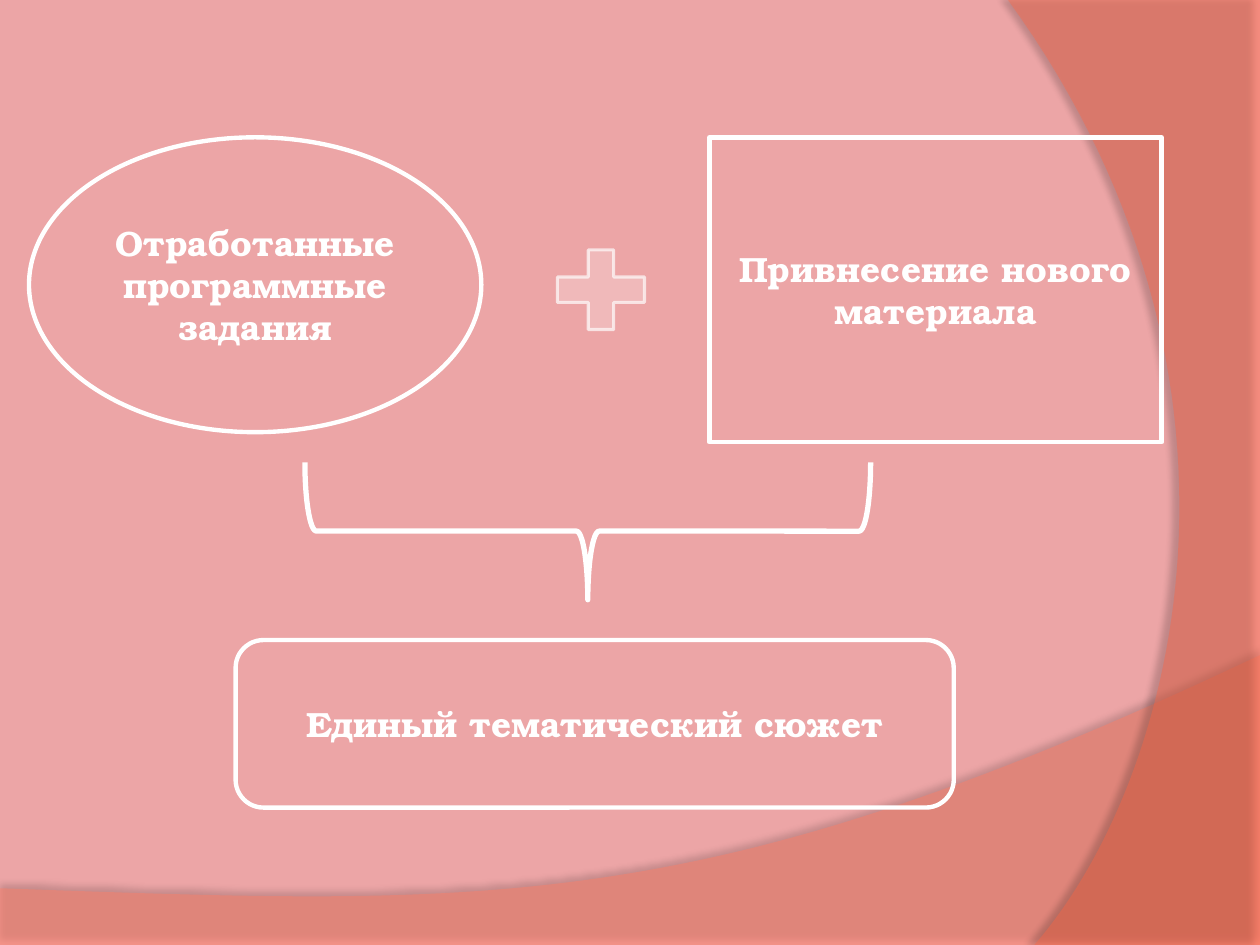
from lxml.etree import SubElement
from pptx import Presentation
from pptx.dml.color import RGBColor
from pptx.enum.shapes import MSO_SHAPE
from pptx.enum.text import MSO_ANCHOR, PP_ALIGN
from pptx.oxml.ns import qn
from pptx.util import Inches, Pt

WIDTH, HEIGHT = 10, 7.5
FONT = "TeX Gyre Bonum"
COLORS = {
    "background": "ECA5A6",
    "bottom wave": "FF7E66",
    "right wave": "FF6542",
    "white": "FFFFFF",
    "shadow": "000000",
}

# Content: shape kind, left, top, width, height, inset, lines of text
TOP_ROW, BOX_WIDTH = 1.09, 3.59
IDEAS = [
    (MSO_SHAPE.OVAL, 0.23, TOP_ROW, BOX_WIDTH, 2.34, 0.1,
     ["Отработанные программные задания"]),
    (MSO_SHAPE.RECTANGLE, 5.63, TOP_ROW, BOX_WIDTH, 2.42, 0.05,
     ["Привнесение нового", "материала"]),
    (MSO_SHAPE.ROUNDED_RECTANGLE, 1.87, 5.08, 5.7, 1.33, 0.1,
     ["Единый тематический сюжет"]),
]

# Waves: color, opacity, straight corners, curve (four control points),
# shadow (opacity, blur, distance, direction)
WAVES = [
    ("bottom wave", 45, [(0, HEIGHT), (WIDTH, HEIGHT)],
     [(WIDTH, 5.2), (5.59, 7.29), (3.91, 7.19), (0, 7.05)], (35, 4, 3.5, 270)),
    ("right wave", 40, [(WIDTH, 0), (WIDTH, HEIGHT)],
     [(8.21, HEIGHT), (9.35, 6.19), (10.18, 3), (8, 0)], (45, 4, 4, 180)),
]


def color(name):
    return RGBColor.from_string(COLORS[name])


def set_opacity(fill_element, percent):
    SubElement(fill_element.find(".//" + qn("a:srgbClr")), qn("a:alpha"),
               val=str(percent * 1000))


def curve_points(controls, steps=60):
    a, b, c, d = controls
    for step in range(steps + 1):
        t = step / steps
        weights = ((1 - t) ** 3, 3 * t * (1 - t) ** 2, 3 * t * t * (1 - t), t ** 3)
        yield tuple(sum(w * p[axis] for w, p in zip(weights, (a, b, c, d)))
                    for axis in (0, 1))


def add_wave(shapes, name, opacity, corners, controls, shadow):
    points = [(Inches(x), Inches(y)) for x, y in [*corners, *curve_points(controls)]]
    builder = shapes.build_freeform(*points[0], scale=1.0)
    builder.add_line_segments(points[1:], close=True)
    wave = builder.convert_to_shape()
    wave.fill.solid()
    wave.fill.fore_color.rgb = color(name)
    set_opacity(wave.element.spPr.find(qn("a:solidFill")), opacity)
    wave.line.fill.background()
    wave.shadow.inherit = False
    shadow_opacity, blur, distance, direction = shadow
    outer = SubElement(wave.element.spPr.find(qn("a:effectLst")), qn("a:outerShdw"),
                       blurRad=str(Pt(blur)), dist=str(Pt(distance)),
                       dir=str(direction * 60000), algn="ctr", rotWithShape="0")
    tint = SubElement(outer, qn("a:srgbClr"), val=COLORS["shadow"])
    SubElement(tint, qn("a:alpha"), val=str(shadow_opacity * 1000))


def add_outline(shapes, kind, left, top, width, height, weight=2.5):
    shape = shapes.add_shape(kind, *map(Inches, (left, top, width, height)))
    shape.shadow.inherit = False
    shape.fill.background()
    shape.line.color.rgb = color("white")
    shape.line.width = Pt(weight)
    return shape


def add_idea(shapes, kind, left, top, width, height, inset, lines):
    frame = add_outline(shapes, kind, left, top, width, height).text_frame
    frame.word_wrap = True
    frame.vertical_anchor = MSO_ANCHOR.MIDDLE
    frame.margin_left = frame.margin_right = Inches(inset)
    frame.margin_top = frame.margin_bottom = Inches(0.05)
    para = frame.paragraphs[0]
    para.alignment = PP_ALIGN.CENTER
    for number, line in enumerate(lines):
        if number:
            para.add_line_break()
        span = para.add_run()
        span.text = line
        span.font.name = FONT
        span.font.size = Pt(20)
        span.font.bold = True
        span.font.color.rgb = color("white")


def main():
    deck = Presentation()
    deck.slide_width, deck.slide_height = Inches(WIDTH), Inches(HEIGHT)
    page = deck.slides.add_slide(deck.slide_layouts[6])
    page.background.fill.solid()
    page.background.fill.fore_color.rgb = color("background")

    # Backdrop
    for wave in WAVES:
        add_wave(page.shapes, *wave)

    # Ideas and their common plot
    for idea in IDEAS:
        add_idea(page.shapes, *idea)

    # Plus sign between the ideas
    plus = add_outline(page.shapes, MSO_SHAPE.MATH_PLUS, 4.3, 1.87, 0.94, 0.86, 1.75)
    plus.fill.solid()
    plus.fill.fore_color.rgb = color("white")
    set_opacity(plus.element.spPr.find(qn("a:solidFill")), 23)
    set_opacity(plus.element.spPr.find(qn("a:ln")), 68)

    # Brace that gathers both ideas, turned to point down
    brace = add_outline(page.shapes, MSO_SHAPE.RIGHT_BRACE, 4.12, 1.97, 1.09, 4.49, 3)
    brace.rotation = 90

    deck.save("out.pptx")


if __name__ == "__main__":
    main()
